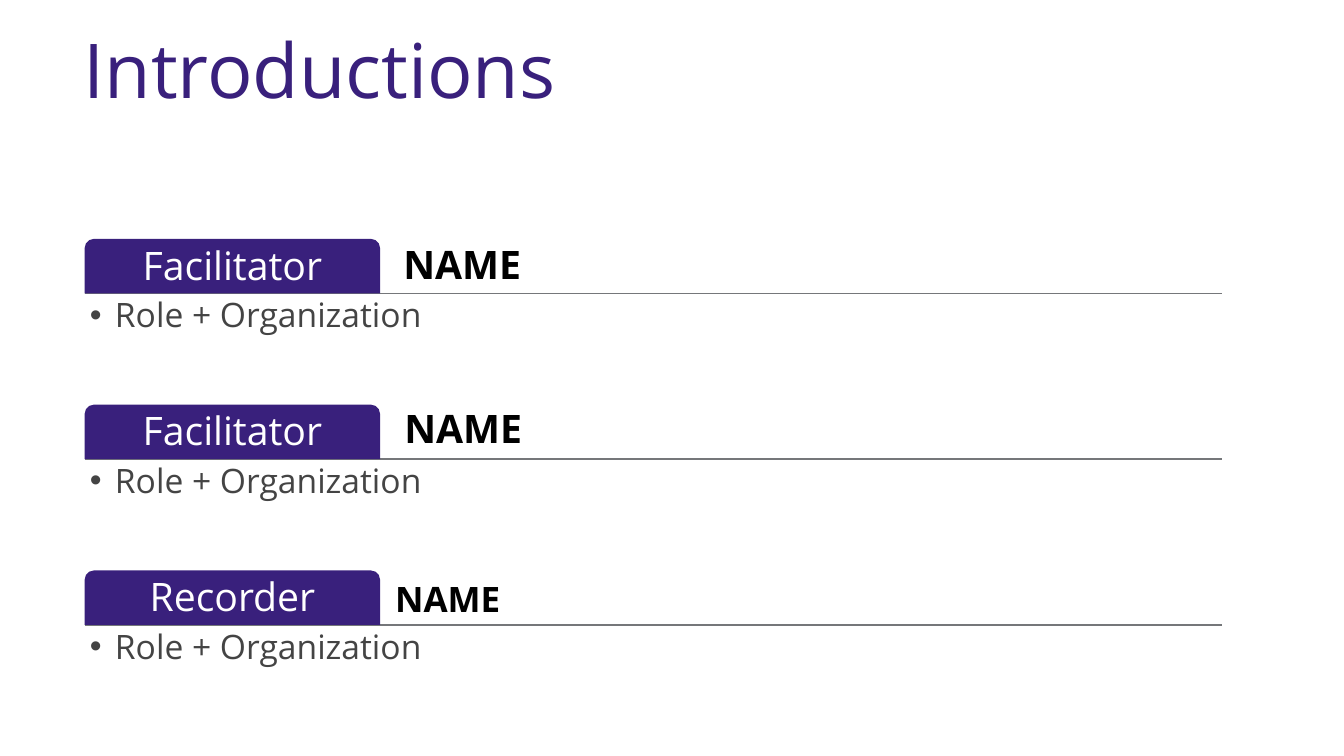
from dataclasses import dataclass

from lxml.etree import SubElement
from pptx import Presentation
from pptx.dml.color import RGBColor
from pptx.enum.shapes import MSO_CONNECTOR as Connector, MSO_SHAPE as Shape
from pptx.enum.text import MSO_ANCHOR as Anchor, MSO_AUTO_SIZE as AutoSize, PP_ALIGN as Align
from pptx.oxml.ns import qn
from pptx.util import Inches, Pt

COLORS = {"purple": "39207C", "rule": "75777A", "role": "444444",
          "name": "000000", "label": "FFFFFF"}
FONT = "Open Sans"
LEFT, WIDTH = 0.84, 11.28
TAB_WIDTH, TAB_HEIGHT = 2.93, 0.54
NAME_LEFT, NAME_WIDTH = 3.78, 8.34
FIRST_RULE, LAST_RULE = 2.91, 6.2


@dataclass
class Person:
    label: str
    name_top: float
    name_indent: float
    name_size: int
    name: str = "NAME"
    role: str = "Role + Organization"


PEOPLE = [
    Person("Facilitator", 2.37, 0.22, 28),
    Person("Facilitator", 3.99, 0.23, 28),
    Person("Recorder", 5.66, 0.14, 25),
]


def color(key: str) -> RGBColor:
    return RGBColor.from_string(COLORS[key])


def place(box, left: float, top: float, width: float, height: float) -> None:
    lengths = {"left": left, "top": top, "width": width, "height": height}
    for key, value in lengths.items():
        setattr(box, key, Inches(value))


def write(box, text: str, size: int, ink: str, anchor, align=Align.LEFT,
          bold: bool = False, margins=(0.05, 0.05, 0.05, 0.05)):
    """Fill a box with one formatted paragraph and return the paragraph."""
    frame = box.text_frame
    frame_format = {"word_wrap": True, "auto_size": AutoSize.NONE, "vertical_anchor": anchor}
    for side, margin in zip(("left", "top", "right", "bottom"), margins):
        frame_format[f"margin_{side}"] = Inches(margin)
    para = frame.paragraphs[0]
    span = para.add_run()
    span.text = text
    formats = [
        (frame, frame_format),
        (para, {"alignment": align, "line_spacing": 0.9,
                "space_before": Pt(0), "space_after": Pt(0)}),
        (span.font, {"name": FONT, "size": Pt(size), "bold": bold}),
    ]
    for target, values in formats:
        for key, value in values.items():
            setattr(target, key, value)
    span.font.color.rgb = color(ink)
    return para


def add_bullet(para, ink: str) -> None:
    properties = para._p.get_or_add_pPr()
    properties.set("marL", str(Inches(0.25)))
    properties.set("indent", str(Inches(-0.25)))
    bullet_color = SubElement(properties, qn("a:buClr"))
    SubElement(bullet_color, qn("a:srgbClr"), val=COLORS[ink])
    SubElement(properties, qn("a:buChar"), char="•")


def draw_rule(page, top: float) -> None:
    rule = page.shapes.add_connector(Connector.STRAIGHT, Inches(LEFT), Inches(top),
                                     Inches(LEFT + WIDTH), Inches(top))
    rule.line.color.rgb = color("rule")
    rule.line.width = Pt(1)
    SubElement(rule._element.spPr, qn("a:effectLst"))


def draw_tab(page, label: str, top: float) -> None:
    tab = page.shapes.add_shape(Shape.ROUND_2_SAME_RECTANGLE, Inches(LEFT), Inches(top),
                                Inches(TAB_WIDTH), Inches(TAB_HEIGHT))
    tab.shadow.inherit = False
    tab.adjustments[0], tab.adjustments[1] = 0.167, 0
    tab.fill.solid()
    tab.fill.fore_color.rgb = color("purple")
    tab.line.fill.background()
    write(tab, label, 28, "label", Anchor.MIDDLE, Align.CENTER, margins=(0, 0, 0, 0))


def draw_person(page, person: Person, role_box, rule_top: float) -> None:
    draw_rule(page, rule_top)
    draw_tab(page, person.label, rule_top - TAB_HEIGHT)

    # Name beside the tab
    name_box = page.shapes.add_textbox(Inches(NAME_LEFT), Inches(person.name_top),
                                       Inches(NAME_WIDTH), Inches(TAB_HEIGHT))
    write(name_box, person.name, person.name_size, "name", Anchor.BOTTOM, bold=True,
          margins=(person.name_indent, 0.05, 0.05, 0.05))

    # Role below the rule
    place(role_box, LEFT, rule_top, WIDTH, 1.08)
    add_bullet(write(role_box, person.role, 24, "role", Anchor.TOP), "role")


def main() -> None:
    deck = Presentation()
    deck.slide_width, deck.slide_height = Inches(13.33), Inches(7.5)
    page = deck.slides.add_slide(deck.slide_layouts.get_by_name("Comparison"))

    # Title
    title = page.shapes.title
    place(title, 0.73, 0.28, 11.5, 1.45)
    write(title, "Introductions", 54, "purple", Anchor.TOP, margins=(0.1, 0.05, 0.1, 0.05))

    # One body placeholder per person, the spare one removed
    *role_boxes, spare = [box for box in page.placeholders if box.placeholder_format.idx in range(1, 5)]
    spare._element.getparent().remove(spare._element)

    pitch = (LAST_RULE - FIRST_RULE) / (len(PEOPLE) - 1)
    for row, (person, role_box) in enumerate(zip(PEOPLE, role_boxes)):
        draw_person(page, person, role_box, FIRST_RULE + row * pitch)

    deck.save("out.pptx")


if __name__ == "__main__":
    main()
